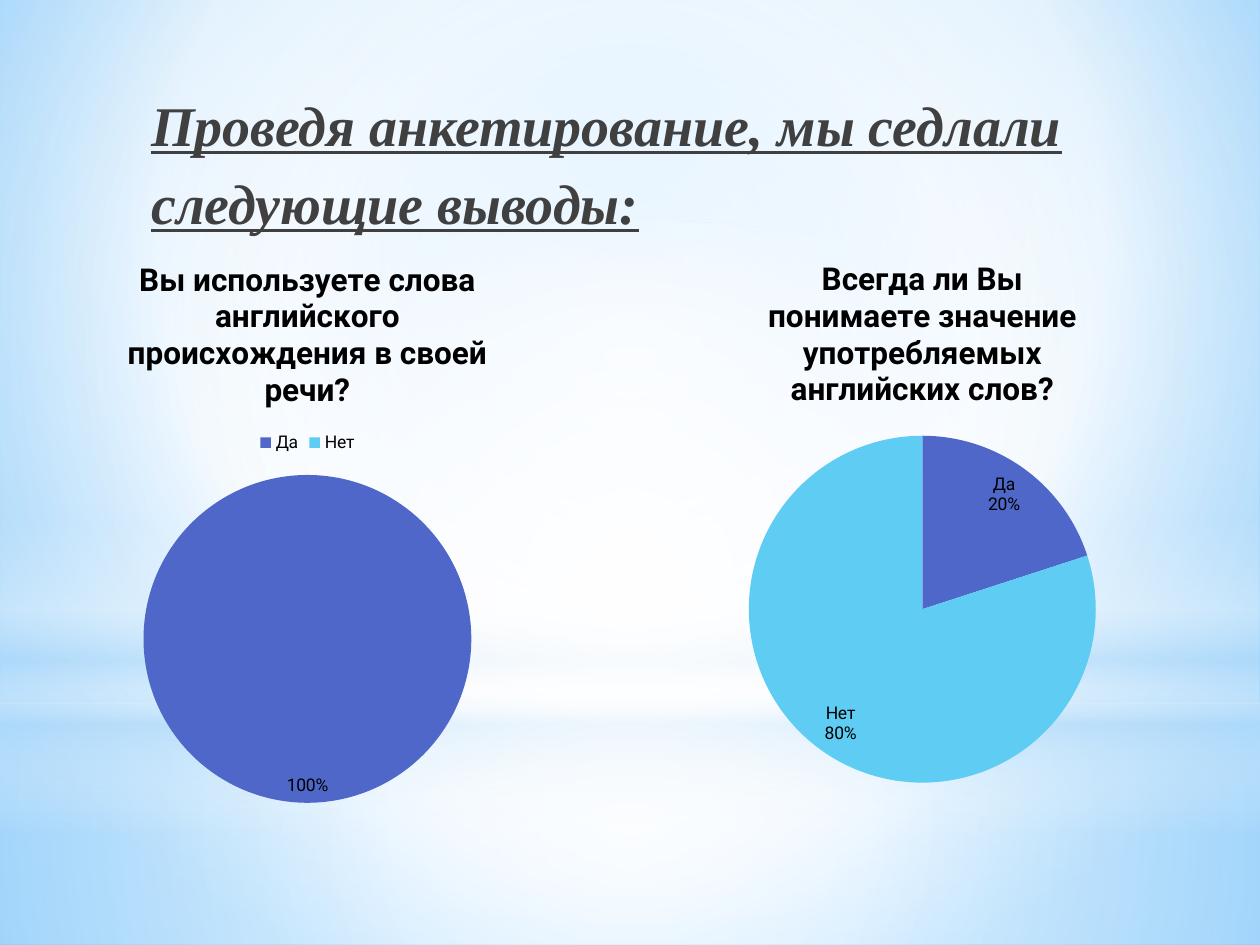
"""Builds a slide with two pie charts that sum up a survey."""
from lxml.etree import SubElement
from pptx import Presentation
from pptx.chart.data import CategoryChartData
from pptx.dml.color import RGBColor
from pptx.enum.chart import XL_CHART_TYPE, XL_LABEL_POSITION, XL_LEGEND_POSITION
from pptx.enum.shapes import MSO_SHAPE
from pptx.enum.text import MSO_ANCHOR, PP_ALIGN
from pptx.oxml.ns import qn
from pptx.util import Inches, Pt

COLORS = {
    "white": "FFFFFF", "haze": "B4DCFA", "sky": "9ED5FF", "azure": "5BB9FF",
    "heading": "404040", "text": "000000", "yes": "4E67C8", "no": "5ECCF3",
}
CENTER = (50, 50, 50, 50)


class SurveySlide:
    def __init__(self, deck):
        self.page = deck.slides.add_slide(deck.slide_layouts[5])
        self.heading_font = "Times New Roman"
        self.chart_font = "Roboto"

    def color(self, name):
        return RGBColor.from_string(COLORS[name])

    def gradient(self, fill, holder, stops, focus=None):
        fill.solid()
        solid = holder.find(qn("a:solidFill"))
        gradient = SubElement(holder, qn("a:gradFill"), rotWithShape="1")
        holder.replace(solid, gradient)
        stop_list = SubElement(gradient, qn("a:gsLst"))
        for position, name, alpha in stops:
            stop = SubElement(stop_list, qn("a:gs"), pos=str(position * 1000))
            tint = SubElement(stop, qn("a:srgbClr"), val=COLORS[name])
            if alpha < 100:
                SubElement(tint, qn("a:alpha"), val=str(alpha * 1000))
        if focus:
            circle = SubElement(gradient, qn("a:path"), path="circle")
            edges = {side: str(part * 1000) for side, part in zip("ltrb", focus)}
            SubElement(circle, qn("a:fillToRect"), **edges)
        else:
            SubElement(gradient, qn("a:lin"), ang="5400000", scaled="0")

    def background(self, stops, focus):
        fill = self.page.background.fill
        fill.solid()
        holder = self.page.element.find(".//" + qn("p:bgPr"))
        self.gradient(fill, holder, stops, focus)

    def glow(self, kind, top, height, stops, focus=None):
        shape = self.page.shapes.add_shape(
            kind, 0, Inches(top), Inches(10), Inches(height))
        shape.shadow.inherit = False
        shape.line.fill.background()
        self.gradient(shape.fill, shape.element.spPr, stops, focus)

    def title(self, text, left, top, width, height):
        box = self.page.shapes.title
        self.page.shapes.element.append(box.element)
        box.left, box.top = Inches(left), Inches(top)
        box.width, box.height = Inches(width), Inches(height)
        frame = box.text_frame
        frame.text = text
        frame.word_wrap = True
        frame.vertical_anchor = MSO_ANCHOR.TOP
        frame.margin_top = Inches(0.2)
        paragraph = frame.paragraphs[0]
        paragraph.alignment = PP_ALIGN.LEFT
        paragraph.line_spacing = 1.15
        paragraph._p.get_or_add_pPr().set("marL", str(Inches(0.35)))
        font = paragraph.font
        font.name, font.size = self.heading_font, Pt(32)
        font.bold = font.italic = font.underline = True
        font.color.rgb = self.color("heading")

    def pie(self, question, values, left, top, width, height, legend):
        data = CategoryChartData()
        data.categories = ["Да", "Нет"]
        data.add_series(question, values)
        chart = self.page.shapes.add_chart(
            XL_CHART_TYPE.PIE, Inches(left), Inches(top),
            Inches(width), Inches(height), data).chart
        chart.font.name, chart.font.size = self.chart_font, Pt(10)
        chart.font.color.rgb = self.color("text")

        chart.has_title = True
        chart.chart_title.include_in_layout = False
        frame = chart.chart_title.text_frame
        frame.text = question
        font = frame.paragraphs[0].font
        font.name, font.size, font.bold = self.chart_font, Pt(18), True
        font.color.rgb = self.color("text")

        chart.has_legend = legend
        if legend:
            chart.legend.position = XL_LEGEND_POSITION.TOP
            chart.legend.include_in_layout = False

        plot = chart.plots[0]
        plot.vary_by_categories = True
        for index, name in enumerate(("yes", "no")):
            fill = plot.series[0].points[index].format.fill
            fill.solid()
            fill.fore_color.rgb = self.color(name)
            if not values[index]:
                empty = plot.series[0].points[index].data_label
                empty._get_or_add_dLbl().getparent().remove(empty._dLbl)
        labels = plot.series[0].data_labels
        labels.show_percentage = True
        labels.show_value = False
        labels.show_category_name = not legend
        labels.number_format = "0%"
        labels.number_format_is_linked = False
        labels.position = XL_LABEL_POSITION.INSIDE_END


def main():
    deck = Presentation()
    deck.slide_width, deck.slide_height = Inches(10), Inches(7.5)
    slide = SurveySlide(deck)
    slide.background(
        [(0, "sky", 100), (60, "white", 100), (100, "azure", 100)], (20, 10, 20, 60))
    slide.glow(MSO_SHAPE.RECTANGLE, 5.58, 1.92,
               [(0, "white", 91), (37, "white", 76), (100, "haze", 79)], CENTER)
    slide.glow(MSO_SHAPE.RECTANGLE, 0, 5.58,
               [(0, "white", 89), (48, "white", 62), (100, "haze", 79)], CENTER)
    slide.glow(MSO_SHAPE.RECTANGLE, 4.12, 2.5,
               [(0, "white", 0), (29, "white", 30), (45, "haze", 40),
                (55, "white", 26), (65, "haze", 60), (100, "white", 0)])
    slide.glow(MSO_SHAPE.OVAL, 1.75, 5.58,
               [(0, "white", 100), (56, "white", 0)], CENTER)
    slide.title("Проведя анкетирование, мы седлали следующие выводы:",
                0.75, 0.44, 8.66, 2.13)
    slide.pie("Вы используете слова английского происхождения в своей речи?",
              (100, 0), 0.43, 1.86, 4.02, 4.65, legend=True)
    slide.pie("Всегда ли Вы понимаете значение употребляемых английских слов?",
              (20, 80), 5.47, 1.86, 3.7, 4.49, legend=False)
    deck.save("out.pptx")


if __name__ == "__main__":
    main()
